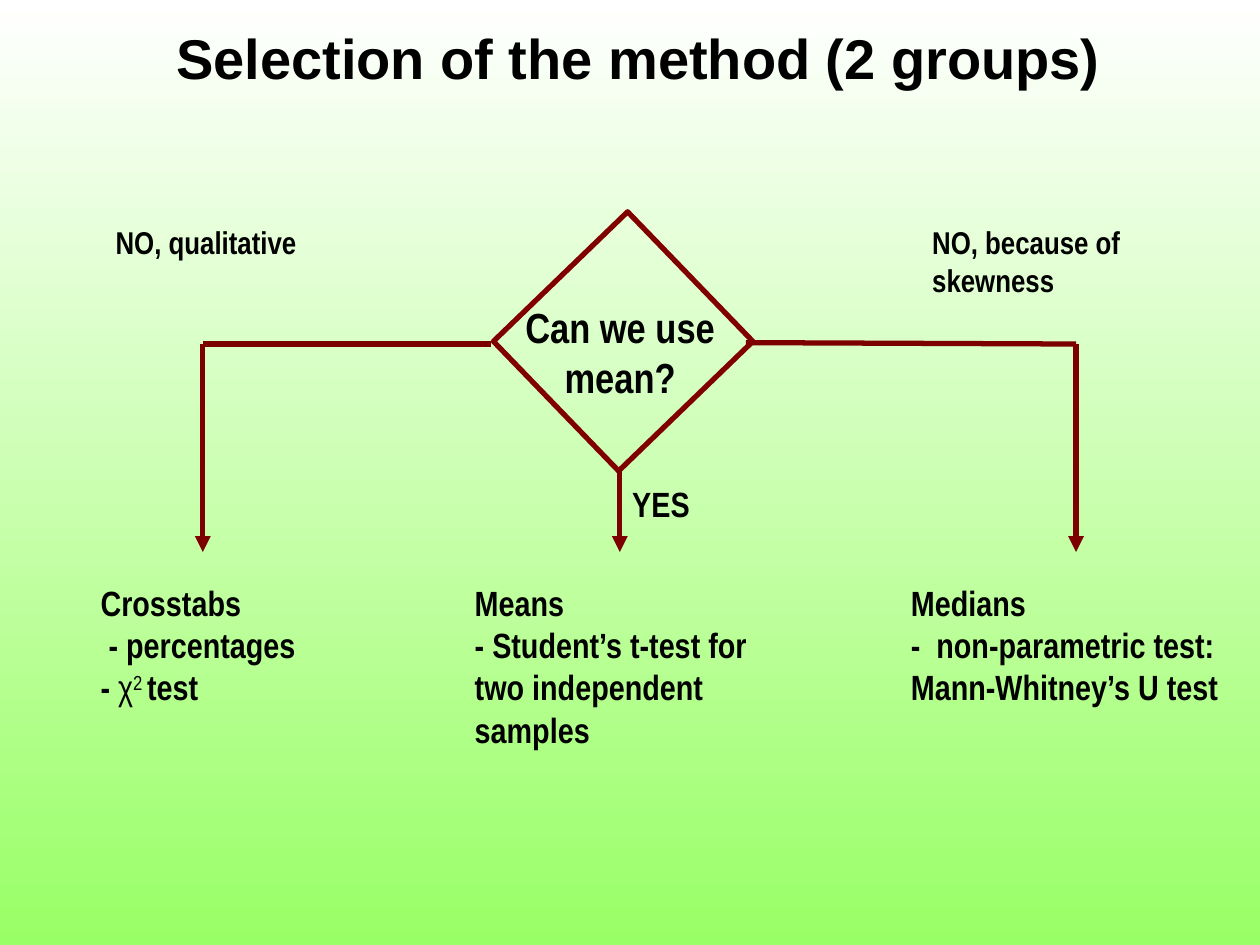
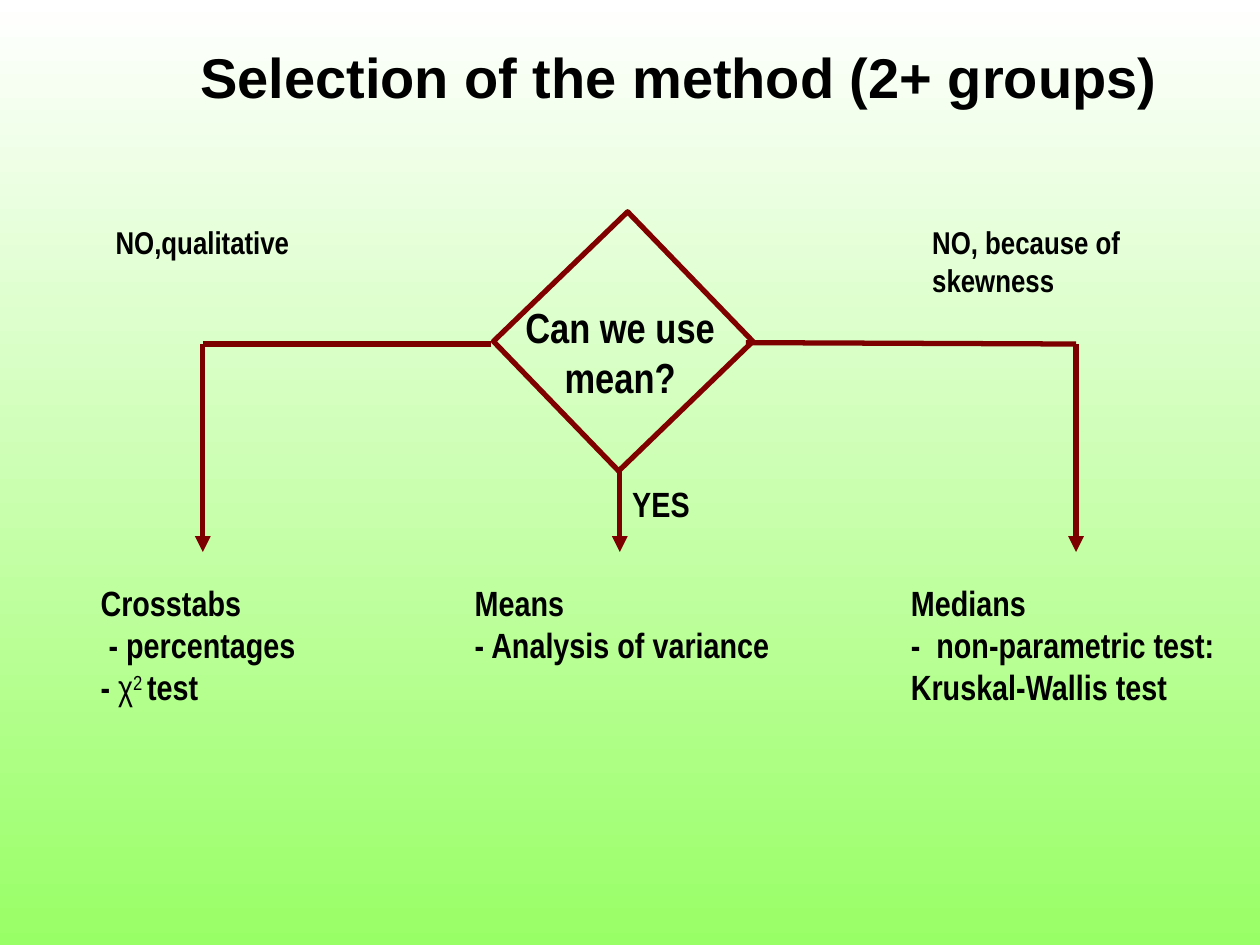
from pptx import Presentation
from pptx.dml.color import RGBColor
from pptx.enum.dml import MSO_LINE
from pptx.enum.shapes import MSO_CONNECTOR, MSO_SHAPE
from pptx.enum.text import MSO_AUTO_SIZE, PP_ALIGN
from pptx.oxml.ns import qn
from pptx.util import Pt
from lxml.etree import SubElement

# Content: a paragraph is a string or a list of (text, run format)
CHI_SQUARE = [("- ", {}), ("χ", {"bold": False}),
              ("2 ", {"bold": False, "raised": True}), ("test", {})]
CROSSTABS = ["Crosstabs", " - percentages", CHI_SQUARE]
SLIDES = [
    {"title": "Selection of the method (2 groups)", "title_at": (93.6, 20.2),
     "left_reason": "NO, qualitative",
     "means": "- Student’s t-test for two independent samples",
     "medians": "-  non-parametric test: Mann-Whitney’s U test"},
    {"title": "Selection of the method (2+ groups)", "title_at": (107.3, 31),
     "left_reason": "NO,qualitative",
     "means": "- Analysis of variance",
     "medians": "-  non-parametric test: Kruskal-Wallis test"},
]

# Shared look
BLACK = RGBColor(0, 0, 0)
WHITE = RGBColor(255, 255, 255)
GREEN = RGBColor(0x99, 0xFF, 0x66)
MAROON = RGBColor(0x7D, 0, 0)
DIAMOND_LINE = RGBColor(0x80, 0, 0)
TITLE_FONT, BODY_FONT = "Arial", "Arial Narrow"
LINE_WIDTH = 3

# Flowchart positions in points
LEFT_X, MID_X, RIGHT_X = 115.9, 354.2, 614.9
BRANCH_Y, ARROW_END_Y = 196.6, 315.4
REASON_Y, RESULT_Y = 123.8, 329
LABEL_W = 174.2


def add_text(s, paragraphs, x, y, w, h, size=20, font=BODY_FONT,
             align=None, spacing=None, grow=True):
    tf = s.shapes.add_textbox(Pt(x), Pt(y), Pt(w), Pt(h)).text_frame
    tf.word_wrap = True
    tf.auto_size = MSO_AUTO_SIZE.SHAPE_TO_FIT_TEXT if grow else MSO_AUTO_SIZE.NONE
    for i, runs in enumerate(paragraphs):
        p = tf.add_paragraph() if i else tf.paragraphs[0]
        p.alignment, p.line_spacing = align, spacing
        for text, fmt in [(runs, {})] if isinstance(runs, str) else runs:
            r = p.add_run()
            r.text = text
            r.font.name, r.font.size = font, Pt(size)
            r.font.bold = fmt.get("bold", True)
            r.font.color.rgb = BLACK
            if fmt.get("raised"):
                r._r.get_or_add_rPr().set("baseline", "30000")


def add_line(s, x1, y1, x2, y2, arrow=False):
    c = s.shapes.add_connector(MSO_CONNECTOR.STRAIGHT, Pt(x1), Pt(y1), Pt(x2), Pt(y2))
    c.line.color.rgb, c.line.width = MAROON, Pt(LINE_WIDTH)
    if arrow:
        SubElement(c.line._get_or_add_ln(), qn("a:tailEnd"), type="triangle")
    SubElement(c._element.spPr, qn("a:effectLst"))


def add_diamond(s):
    sp = s.shapes.add_shape(MSO_SHAPE.RECTANGLE, Pt(304.6), Pt(141.8), Pt(103), Pt(106.6))
    sp.rotation = 46
    sp.shadow.inherit = False
    sp.fill.background()
    sp.line.color.rgb, sp.line.width = DIAMOND_LINE, Pt(LINE_WIDTH)
    sp.line.dash_style = MSO_LINE.SOLID


def add_background(s):
    fill = s.background.fill
    fill.gradient()
    fill.gradient_angle = 270
    for stop, color, position in zip(fill.gradient_stops, (WHITE, GREEN), (0, 1)):
        stop.color.rgb, stop.position = color, position


def build_slide(prs, content):
    s = prs.slides.add_slide(prs.slide_layouts[6])
    add_background(s)
    add_text(s, [content["title"]], *content["title_at"], 646.6, 87.1,
             size=32, font=TITLE_FONT, spacing=0.7, grow=False)

    # Horizontal branches
    add_line(s, 426.2, 195.8, RIGHT_X, BRANCH_Y)
    add_line(s, 280.8, BRANCH_Y, LEFT_X, BRANCH_Y)

    # Question and answers
    add_text(s, [content["left_reason"]], 59, REASON_Y, LABEL_W, 28.8, size=18)
    add_text(s, ["NO, because of skewness"], 525.6, REASON_Y, LABEL_W, 51.1, size=18)
    add_text(s, ["Can we use mean?"], 286.6, 168.5, 135.4, 65.5,
             size=24, align=PP_ALIGN.CENTER)
    add_text(s, ["YES"], MID_X, 272.2, LABEL_W, 31.7)

    # Methods
    for paragraphs, x, w in ((["Means", content["means"]], 264.2, 202.3),
                             (["Medians", content["medians"]], 513.4, 195.8),
                             (CROSSTABS, 50.4, LABEL_W)):
        add_text(s, paragraphs, x, RESULT_Y, w, 79.9)

    # Diamond and arrows down to the methods
    add_diamond(s)
    for x, top in ((LEFT_X, BRANCH_Y), (RIGHT_X, BRANCH_Y), (MID_X, 267.1)):
        add_line(s, x, top, x, ARROW_END_Y, arrow=True)


def main():
    prs = Presentation()
    prs.slide_width, prs.slide_height = Pt(720), Pt(540)
    for content in SLIDES:
        build_slide(prs, content)
    prs.save("out.pptx")


if __name__ == "__main__":
    main()
